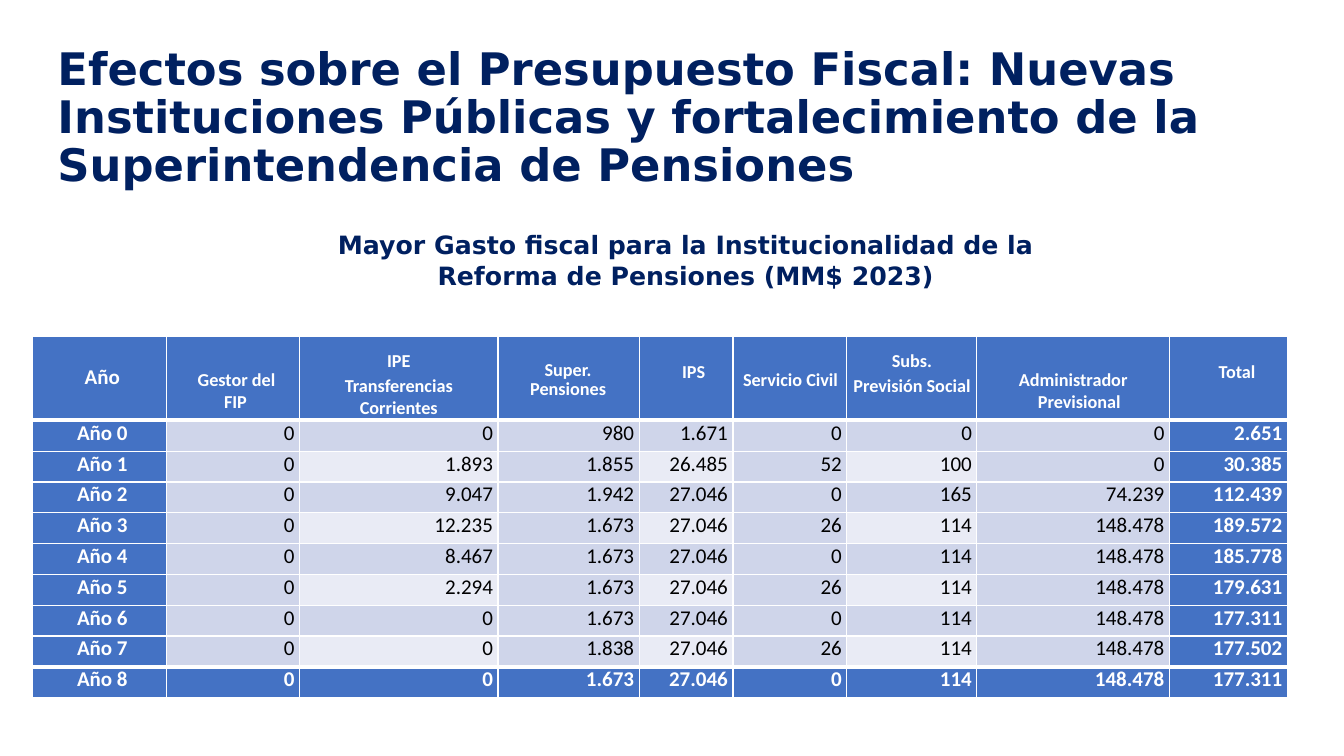
import pptx
import pptx.util
import pptx.dml.color
import pptx.enum.text
import pptx.oxml.ns
import lxml.etree

Inches, Pt = pptx.util.Inches, pptx.util.Pt
RGBColor = pptx.dml.color.RGBColor
Align = pptx.enum.text.PP_ALIGN
Anchor = pptx.enum.text.MSO_ANCHOR

NAVY = RGBColor(0x00, 0x20, 0x60)
BLUE = RGBColor(0x44, 0x72, 0xC4)
PALE = RGBColor(0xCF, 0xD5, 0xEA)
PALER = RGBColor(0xE9, 0xEB, 0xF5)
WHITE = RGBColor(0xFF, 0xFF, 0xFF)
BLACK = RGBColor(0x00, 0x00, 0x00)

TITLE = "Efectos sobre el Presupuesto Fiscal: Nuevas Instituciones Públicas y fortalecimiento de la Superintendencia de Pensiones"
SUBTITLE = "Mayor Gasto fiscal para la Institucionalidad de la Reforma de Pensiones (MM$ 2023)"

HEADINGS = [
    dict(lines=["Año"], width=1.33, top=19.9, left=0.22, right=0.16, size=15),
    dict(lines=["Gestor del FIP"], width=1.32, top=23.4, left=0.17, first=0.02, right=0.12),
    dict(lines=["IPE", "Transferencias Corrientes"], width=1.97, top=13.6, left=0.05,
         right=0.05, tight=1),
    dict(lines=["Super.", "Pensiones"], width=1.4, top=19.7, left=0.03, right=0.04, tight=2),
    dict(lines=["IPS"], width=0.93, top=17.3, left=0.15),
    dict(lines=["Servicio Civil"], width=1.13, top=23.4, left=0.19, first=-0.14, right=0.04),
    dict(lines=["Subs.", "Previsión Social"], width=1.29, top=13.6, left=0.04,
         right=0.04, tight=1),
    dict(lines=["Administrador Previsional"], width=1.91, top=23.4, left=0.17,
         first=-0.12, right=0.05),
    dict(lines=["Total"], width=1.17, top=17.3, left=0.17),
]

SPENDING = [
    ("Año 0", "0", "0", "980", "1.671", "0", "0", "0", "2.651"),
    ("Año 1", "0", "1.893", "1.855", "26.485", "52", "100", "0", "30.385"),
    ("Año 2", "0", "9.047", "1.942", "27.046", "0", "165", "74.239", "112.439"),
    ("Año 3", "0", "12.235", "1.673", "27.046", "26", "114", "148.478", "189.572"),
    ("Año 4", "0", "8.467", "1.673", "27.046", "0", "114", "148.478", "185.778"),
    ("Año 5", "0", "2.294", "1.673", "27.046", "26", "114", "148.478", "179.631"),
    ("Año 6", "0", "0", "1.673", "27.046", "0", "114", "148.478", "177.311"),
    ("Año 7", "0", "0", "1.838", "27.046", "26", "114", "148.478", "177.502"),
    ("Año 8", "0", "0", "1.673", "27.046", "0", "114", "148.478", "177.311"),
]

TABLE_LEFT, TABLE_TOP, TABLE_HEIGHT, HEADING_HEIGHT = 0.32, 3.34, 3.58, 0.83
LAST_YEAR, TOTAL = len(SPENDING), len(HEADINGS) - 1


def write(paragraph, text, size, color, bold=True, font="Calibri"):
    run = paragraph.add_run()
    run.text = text
    run.font.size, run.font.bold, run.font.name = Pt(size), bold, font
    run.font.color.rgb = color


def add_heading(slide, box, text, size, align, inset, spacing):
    frame = slide.shapes.add_textbox(*map(Inches, box)).text_frame
    frame.word_wrap = True
    frame.margin_left = frame.margin_right = Inches(inset)
    frame.margin_top = frame.margin_bottom = Inches(inset / 2)
    paragraph = frame.paragraphs[0]
    paragraph.alignment, paragraph.line_spacing = align, spacing
    write(paragraph, text, size, NAVY, font="DejaVu Sans")


def style_cell(cell, fill, right, top=0, thick_side=None):
    cell.margin_left = cell.margin_bottom = 0
    cell.margin_right, cell.margin_top = Inches(right), Pt(top)
    cell.vertical_anchor = Anchor.TOP
    properties = cell._tc.get_or_add_tcPr()
    qn = pptx.oxml.ns.qn
    for side in "LRTB":
        width = Pt(3 if side == thick_side else 1)
        line = lxml.etree.SubElement(properties, qn("a:ln" + side), w=str(width))
        solid = lxml.etree.SubElement(line, qn("a:solidFill"))
        lxml.etree.SubElement(solid, qn("a:srgbClr"), val=str(WHITE))
    cell.fill.solid()
    cell.fill.fore_color.rgb = fill


def indent(paragraph, left, first=0):
    properties = paragraph._p.get_or_add_pPr()
    properties.set("marL", str(Inches(left)))
    properties.set("indent", str(Inches(first)))


def fill_heading(cell, heading):
    style_cell(cell, BLUE, heading.get("right", 0), heading["top"], "B")
    for number, text in enumerate(heading["lines"]):
        frame = cell.text_frame
        paragraph = frame.add_paragraph() if number else frame.paragraphs[0]
        paragraph.alignment = Align.CENTER
        paragraph.space_before = Pt(1.4 if number else 0)
        if number < heading.get("tight", 0):
            paragraph.line_spacing = Pt(12.2)
        indent(paragraph, heading["left"], heading.get("first", 0))
        write(paragraph, text, heading.get("size", 13), WHITE)


def fill_value(cell, row, column, text):
    strong = column in (0, TOTAL) or row == LAST_YEAR
    light = row % 2 == 0 and column % 2 == 0
    fill = BLUE if strong else PALER if light else PALE
    style_cell(cell, fill, 0.05 if column else 0.16,
               thick_side="T" if row == LAST_YEAR else "B" if row == LAST_YEAR - 1 else None)
    paragraph = cell.text_frame.paragraphs[0]
    paragraph.alignment = Align.RIGHT if column else Align.CENTER
    indent(paragraph, 0 if column else HEADINGS[0]["left"])
    write(paragraph, text, 15, WHITE if strong else BLACK, strong)


def main():
    deck = pptx.Presentation()
    deck.slide_width, deck.slide_height = Inches(13.33), Inches(7.5)
    slide = deck.slides.add_slide(deck.slide_layouts[6])
    add_heading(slide, (0.57, 0.46, 12.45, 0.97), TITLE, 32, Align.LEFT, 0, 0.9)
    add_heading(slide, (3.12, 2.23, 7.36, 0.71), SUBTITLE, 18, Align.CENTER, 0.1, 1)

    table_width = sum(heading["width"] for heading in HEADINGS)
    table = slide.shapes.add_table(
        len(SPENDING) + 1, len(HEADINGS), Inches(TABLE_LEFT), Inches(TABLE_TOP),
        Inches(table_width), Inches(TABLE_HEIGHT)).table
    table.first_row = table.horz_banding = False
    table.rows[0].height = Inches(HEADING_HEIGHT)
    for column, heading in enumerate(HEADINGS):
        table.columns[column].width = Inches(heading["width"])
        fill_heading(table.cell(0, column), heading)
    for row, year in enumerate(SPENDING, 1):
        table.rows[row].height = Inches((TABLE_HEIGHT - HEADING_HEIGHT) / len(SPENDING))
        for column, text in enumerate(year):
            fill_value(table.cell(row, column), row, column, text)
    deck.save("out.pptx")


if __name__ == "__main__":
    main()
